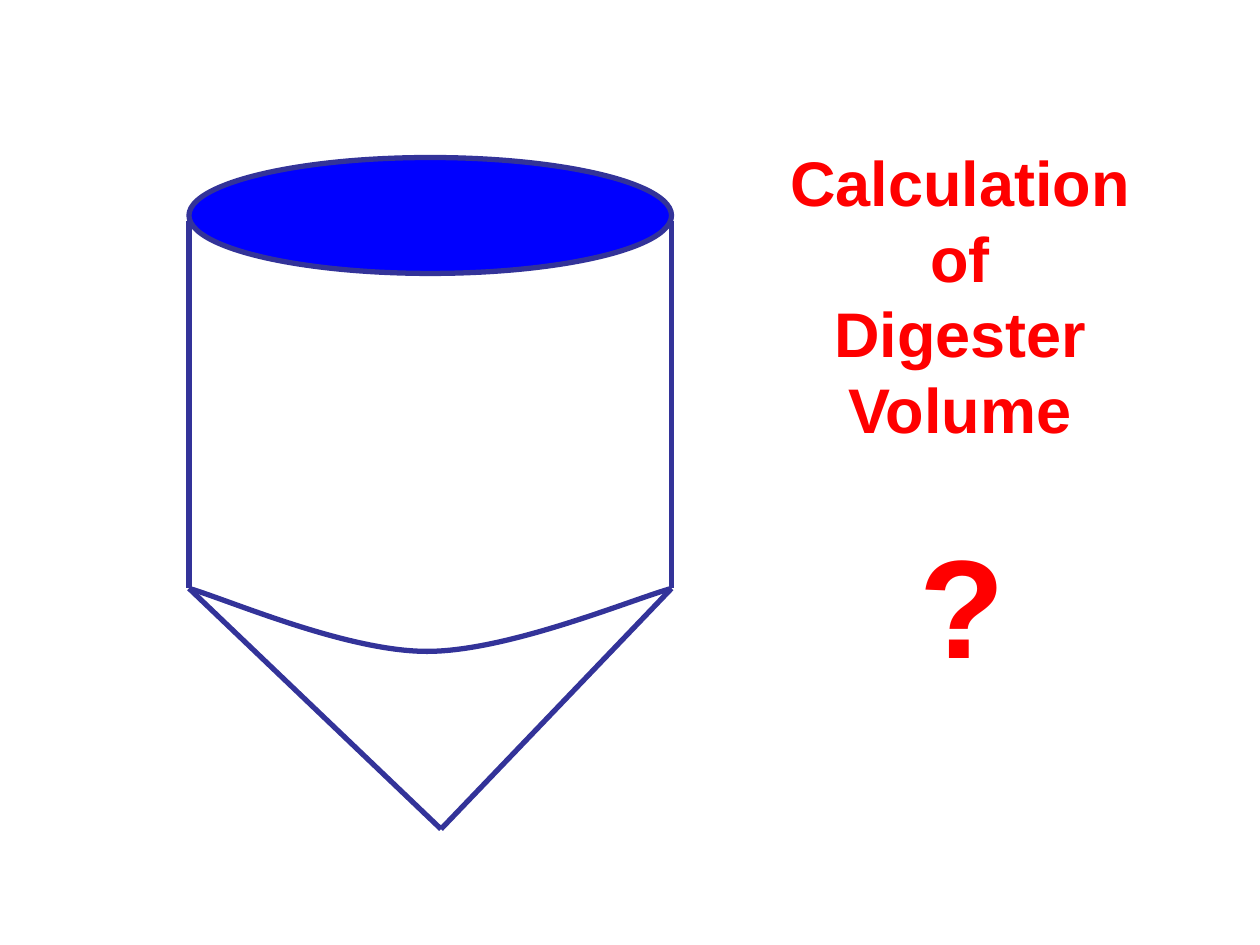
import dataclasses

import pptx
import pptx.dml.color
import pptx.enum.shapes
import pptx.enum.text
import pptx.oxml
import pptx.oxml.ns
import pptx.util
from pptx.util import Inches


@dataclasses.dataclass(frozen=True)
class Theme:
    outline: str = "333399"
    liquid: str = "0000FF"
    accent: str = "FF0000"
    font: str = "Arial"
    title_size: int = 36
    question_size: int = 80
    line_width: int = 3


THEME = Theme()


def color(value):
    return pptx.dml.color.RGBColor.from_string(value)


def style_line(shape):
    shape.line.color.rgb = color(THEME.outline)
    shape.line.width = pptx.util.Pt(THEME.line_width)


def add_line(slide, start, end):
    line = slide.shapes.add_connector(
        pptx.enum.shapes.MSO_CONNECTOR.STRAIGHT,
        *(Inches(value) for value in (*start, *end)))
    style_line(line)
    line._element.spPr.append(pptx.oxml.parse_xml(
        f'<a:effectLst {pptx.oxml.ns.nsdecls("a")}/>'))


def add_curve(slide, start, segments):
    """Draw an open curve; each segment is two control points and an end."""
    builder = slide.shapes.build_freeform(
        Inches(start[0]), Inches(start[1]), scale=1.0)
    builder.add_line_segments(
        [(Inches(x), Inches(y)) for *_, (x, y) in segments], close=False)
    curve = builder.convert_to_shape()
    curve.shadow.inherit = False
    curve.fill.background()
    style_line(curve)
    straight_parts = list(curve._element.iter(pptx.oxml.ns.qn("a:lnTo")))
    for straight, segment in zip(straight_parts, segments):
        points = "".join(
            f'<a:pt x="{Inches(x) - curve.left}" y="{Inches(y) - curve.top}"/>'
            for x, y in segment)
        bezier = pptx.oxml.parse_xml(
            f'<a:cubicBezTo {pptx.oxml.ns.nsdecls("a")}>{points}</a:cubicBezTo>')
        straight.getparent().replace(straight, bezier)


def write_text(shape, lines, size, align, wrap=False):
    frame = shape.text_frame
    frame.word_wrap = wrap
    frame.auto_size = pptx.enum.text.MSO_AUTO_SIZE.SHAPE_TO_FIT_TEXT
    frame.vertical_anchor = pptx.enum.text.MSO_ANCHOR.TOP
    frame.text = "\n".join(lines)
    for paragraph in frame.paragraphs:
        paragraph.alignment = align
        font = paragraph.runs[0].font
        font.name = THEME.font
        font.size = pptx.util.Pt(size)
        font.bold = True
        font.color.rgb = color(THEME.accent)


def add_digester(slide, left, top, width, height):
    """Draw a cylinder with a liquid surface on top of a cone."""
    right = left + width
    surface_height = 0.92
    wall_top = top + 0.5
    cone_top = top + 3.42
    curve_bottom = cone_top + 0.5
    curve_middle = left + 1.89
    tip = (left + 2, top + height)

    surface = slide.shapes.add_shape(
        pptx.enum.shapes.MSO_SHAPE.OVAL, Inches(left), Inches(top),
        Inches(width), Inches(surface_height))
    surface.shadow.inherit = False
    surface.fill.solid()
    surface.fill.fore_color.rgb = color(THEME.liquid)
    style_line(surface)

    for side in (left, right):
        add_line(slide, (side, wall_top), (side, cone_top))
    add_curve(slide, (left, cone_top), [
        [(left + 0.31, cone_top + 0.09), (curve_middle - 0.64, curve_bottom),
         (curve_middle, curve_bottom)],
        [(curve_middle + 0.64, curve_bottom), (right - 0.32, cone_top + 0.09),
         (right, cone_top)],
    ])
    add_line(slide, (left, cone_top), tip)
    add_line(slide, tip, (right, cone_top))


def add_heading(slide, left, top, width, height):
    """Place the title with the large question mark beneath it."""
    title = slide.shapes.title
    title.left, title.top = Inches(left), Inches(top)
    title.width, title.height = Inches(width), Inches(2.5)
    write_text(title, ["Calculation", "of", "Digester", "Volume"],
               size=THEME.title_size, align=pptx.enum.text.PP_ALIGN.CENTER)

    question_height = 1.43
    question = slide.shapes.add_textbox(
        Inches(left + 1.03), Inches(top + height - question_height),
        Inches(0.88), Inches(question_height))
    write_text(question, ["?"], size=THEME.question_size,
               align=pptx.enum.text.PP_ALIGN.LEFT)


def main():
    presentation = pptx.Presentation()
    presentation.slide_width = Inches(10)
    presentation.slide_height = Inches(7.5)
    title_only = presentation.slide_layouts.get_by_name("Title Only")
    slide = presentation.slides.add_slide(title_only)
    add_digester(slide, left=1.5, top=1.25, width=3.83, height=5.33)
    add_heading(slide, left=6.17, top=1.09, width=2.9, height=4.41)
    presentation.save("out.pptx")


if __name__ == "__main__":
    main()
